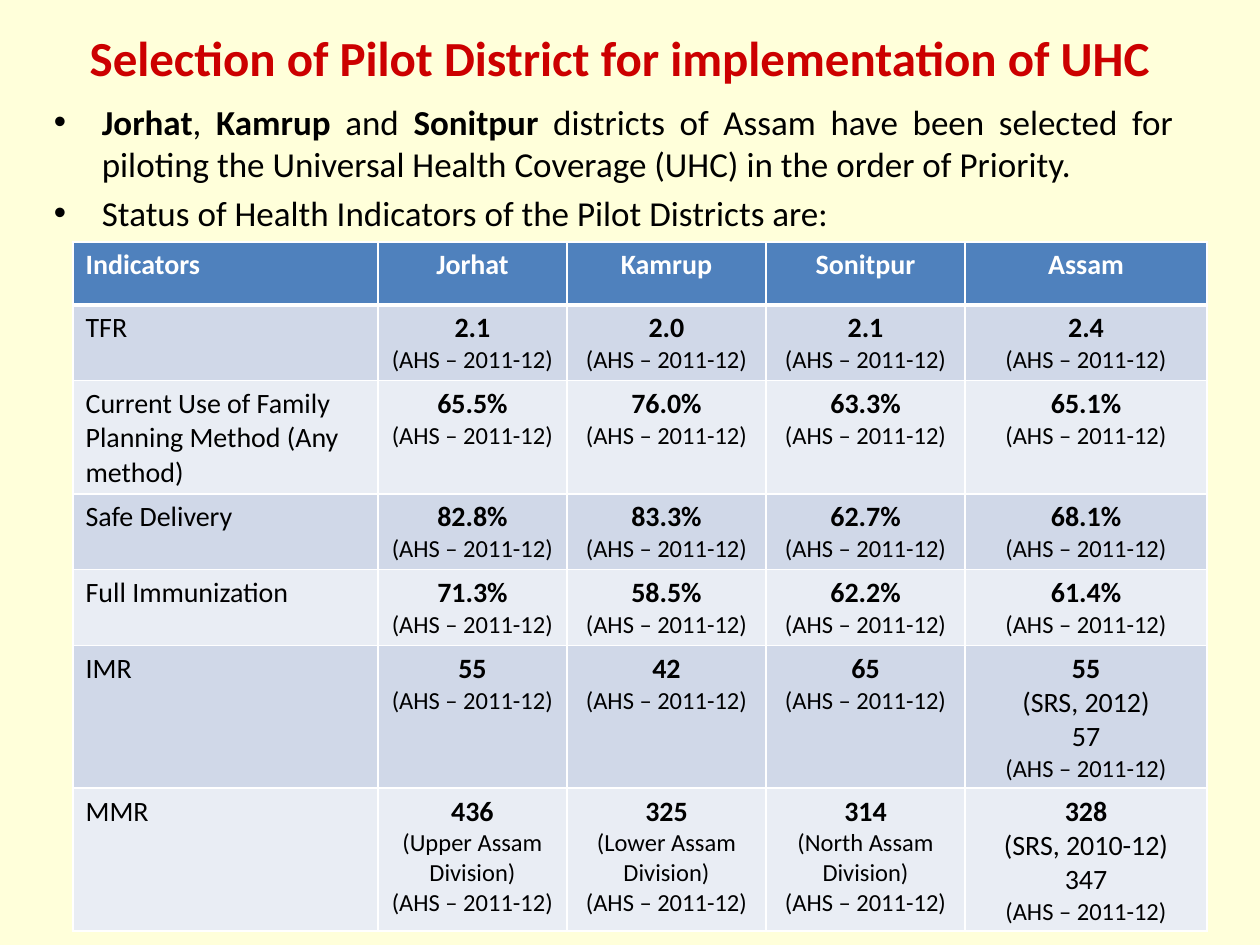
from typing import NamedTuple

from lxml import etree
from pptx import Presentation
from pptx import util as u
from pptx.dml.color import RGBColor
from pptx.enum import text
from pptx.oxml import ns

FONT = "Calibri"
CREAM = RGBColor(0xFF, 0xFF, 0xCC)
RED = RGBColor(0xCC, 0x00, 0x00)
BLACK = RGBColor(0x00, 0x00, 0x00)
WHITE = RGBColor(0xFF, 0xFF, 0xFF)
HEADER_BLUE = RGBColor(0x4F, 0x81, 0xBD)
BAND_DARK = RGBColor(0xD0, 0xD8, 0xE8)
BAND_LIGHT = RGBColor(0xE9, 0xED, 0xF4)

LEFT = text.PP_ALIGN.LEFT
CENTER = text.PP_ALIGN.CENTER
JUSTIFY = text.PP_ALIGN.JUSTIFY
SURVEY = "(AHS – 2011-12)"


class Run(NamedTuple):
    words: str
    size: float = 16
    bold: bool = False
    color: RGBColor = BLACK


class Indicator(NamedTuple):
    name: str
    figures: tuple[str, ...]
    district_notes: tuple[str, ...] = ()
    state_notes: tuple[str, ...] = ()


HEADINGS = ("Indicators", "Jorhat", "Kamrup", "Sonitpur", "Assam")
INDICATORS = (
    Indicator("TFR", ("2.1", "2.0", "2.1", "2.4")),
    Indicator(
        "Current Use of Family Planning Method (Any method)",
        ("65.5%", "76.0%", "63.3%", "65.1%"),
    ),
    Indicator("Safe Delivery", ("82.8%", "83.3%", "62.7%", "68.1%")),
    Indicator("Full Immunization", ("71.3%", "58.5%", "62.2%", "61.4%")),
    Indicator("IMR", ("55", "42", "65", "55"), state_notes=("(SRS, 2012)", "57")),
    Indicator(
        "MMR",
        ("436", "325", "314", "328"),
        tuple(f"({area} Assam Division)" for area in ("Upper", "Lower", "North")),
        ("(SRS, 2010-12)", "347"),
    ),
)
COLUMN_WIDTHS = (2.42, 1.5, 1.58, 1.58, 1.92)
ROW_HEIGHTS = (0.5, 0.5, 0.77, 0.5, 0.5, 0.5, 0.5)
BULLETS = (
    (
        Run("Jorhat", 20, True),
        Run(", ", 20),
        Run("Kamrup", 20, True),
        Run(" and ", 20),
        Run("Sonitpur", 20, True),
        Run(
            " districts of Assam have been selected for piloting the Universal "
            "Health Coverage (UHC) in the order of Priority.",
            20,
        ),
    ),
    (Run("Status of Health Indicators of the Pilot Districts are:", 20),),
)


def write_paragraphs(frame, lines, alignment) -> None:
    for index, line in enumerate(lines):
        paragraph = frame.add_paragraph() if index else frame.paragraphs[0]
        paragraph.alignment = alignment
        for item in line:
            run = paragraph.add_run()
            run.text = item.words
            run.font.name = FONT
            run.font.size = u.Pt(item.size)
            run.font.bold = item.bold
            run.font.color.rgb = item.color


def add_text(slide, left: float, top: float, width: float, height: float, lines, alignment):
    shape = slide.shapes.add_textbox(
        u.Inches(left), u.Inches(top), u.Inches(width), u.Inches(height)
    )
    shape.text_frame.word_wrap = True
    write_paragraphs(shape.text_frame, lines, alignment)
    return shape.text_frame


def set_bullet(paragraph) -> None:
    paragraph.space_before = u.Pt(4)
    properties = paragraph._p.get_or_add_pPr()
    properties.set("marL", str(u.Inches(0.38)))
    properties.set("indent", str(-u.Inches(0.38)))
    etree.SubElement(properties, ns.qn("a:buFont"), typeface="Arial")
    etree.SubElement(properties, ns.qn("a:buChar"), char="•")


def set_borders(cell, top: float, bottom: float) -> None:
    properties = cell._tc.get_or_add_tcPr()
    widths = {"a:lnL": 1, "a:lnR": 1, "a:lnT": top, "a:lnB": bottom}
    for index, (tag, width) in enumerate(widths.items()):
        line = etree.Element(ns.qn(tag), w=str(u.Pt(width)))
        fill = etree.SubElement(line, ns.qn("a:solidFill"))
        etree.SubElement(fill, ns.qn("a:srgbClr"), val=str(WHITE))
        properties.insert(index, line)


def figure_lines(indicator: Indicator, column: int) -> list[tuple[Run, ...]]:
    lines = [(Run(indicator.figures[column], bold=True),)]
    if column < len(indicator.figures) - 1:
        if indicator.district_notes:
            lines.append((Run(indicator.district_notes[column], 14),))
    else:
        lines += [(Run(note),) for note in indicator.state_notes]
    return lines + [(Run(SURVEY, 14),)]


def add_indicator_table(slide) -> None:
    table = slide.shapes.add_table(
        len(ROW_HEIGHTS), len(COLUMN_WIDTHS),
        u.Inches(0.58), u.Inches(1.92), u.Inches(9), u.Inches(5.46),
    ).table
    for column, width in zip(table.columns, COLUMN_WIDTHS):
        column.width = u.Inches(width)
    for row, height in zip(table.rows, ROW_HEIGHTS):
        row.height = u.Inches(height)

    rows = [[[(Run(heading, bold=True, color=WHITE),)] for heading in HEADINGS]]
    for indicator in INDICATORS:
        figures = [figure_lines(indicator, i) for i in range(len(indicator.figures))]
        rows.append([[(Run(indicator.name),)], *figures])

    for row_index, row in enumerate(rows):
        band = BAND_DARK if row_index % 2 else BAND_LIGHT
        for column_index, lines in enumerate(row):
            cell = table.cell(row_index, column_index)
            cell.fill.solid()
            cell.fill.fore_color.rgb = band if row_index else HEADER_BLUE
            set_borders(cell, 3 if row_index == 1 else 1, 1 if row_index else 3)
            write_paragraphs(cell.text_frame, lines, CENTER if column_index else LEFT)


def set_background(slide) -> None:
    fill = slide.background.fill
    fill.solid()
    fill.fore_color.rgb = CREAM
    color = slide.element.find(".//" + ns.qn("a:srgbClr"))
    etree.SubElement(color, ns.qn("a:alpha"), val="72000")


def main() -> None:
    presentation = Presentation()
    presentation.slide_width = u.Inches(10)
    presentation.slide_height = u.Inches(7.5)
    slide = presentation.slides.add_slide(presentation.slide_layouts[6])
    set_background(slide)

    body = add_text(slide, 0.33, 0.75, 9.08, 1, BULLETS, JUSTIFY)
    for paragraph in body.paragraphs:
        set_bullet(paragraph)

    heading = Run("Selection of Pilot District for implementation of UHC ", 28, True, RED)
    title = add_text(slide, 0.25, 0.08, 9.42, 0.75, [(heading,)], CENTER)
    title.vertical_anchor = text.MSO_ANCHOR.MIDDLE

    add_indicator_table(slide)
    presentation.save("out.pptx")


if __name__ == "__main__":
    main()
